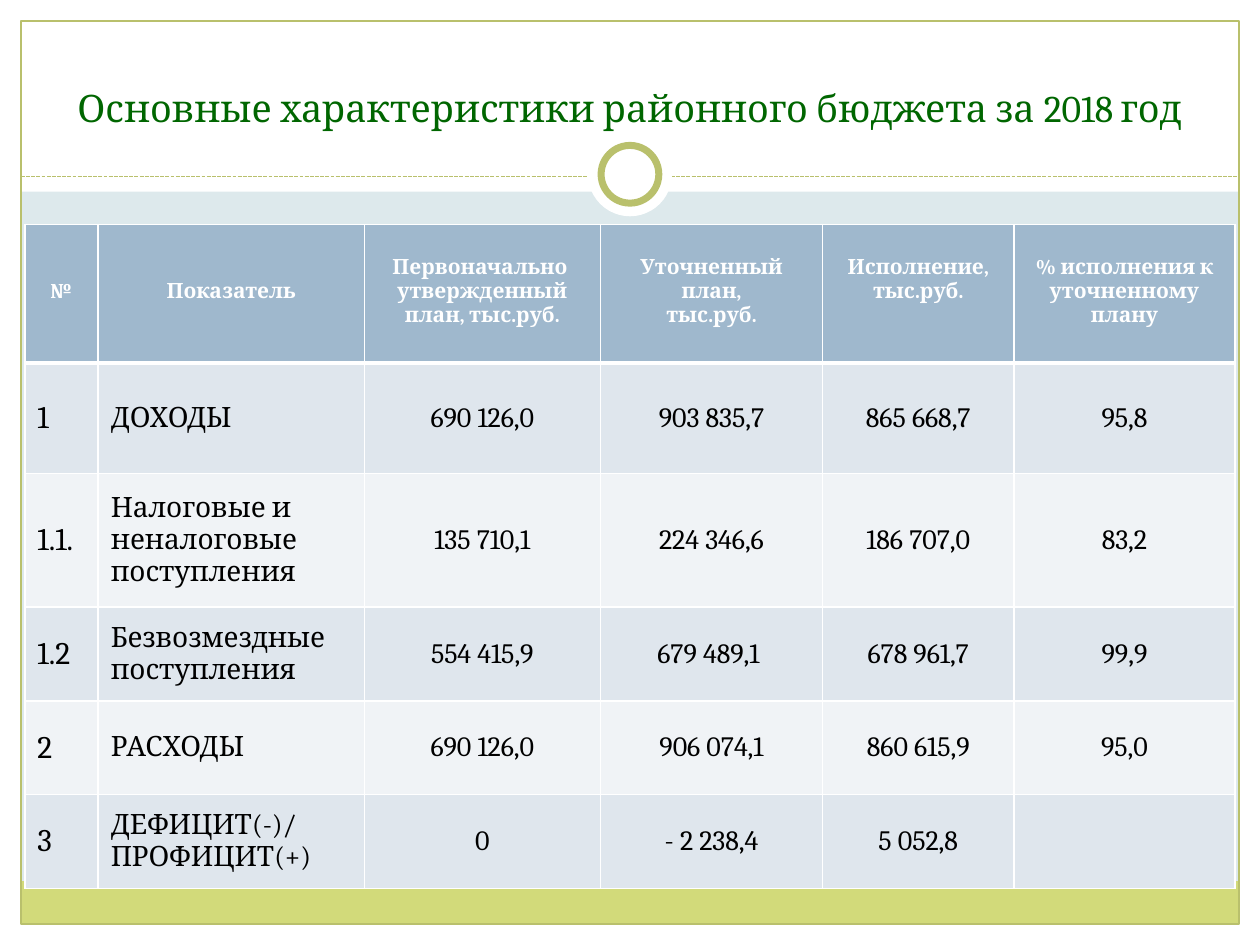
from dataclasses import dataclass

from lxml.etree import SubElement
from pptx import Presentation
from pptx.dml.color import RGBColor
from pptx.enum.dml import MSO_LINE
from pptx.enum.shapes import MSO_CONNECTOR, MSO_SHAPE
from pptx.enum.text import MSO_ANCHOR, MSO_AUTO_SIZE, PP_ALIGN
from pptx.oxml.ns import qn
from pptx.util import Pt


@dataclass(frozen=True)
class Theme:
    """Colours, font and type sizes of the slide."""

    font: str = "Cambria"
    back: str = "DDE9EC"
    white: str = "FFFFFF"
    black: str = "000000"
    olive: str = "B9C06C"
    lime: str = "D2DA7A"
    green: str = "006600"
    header: str = "9FB8CD"
    bands: tuple = ("DFE6ED", "F0F3F6")
    title_size: float = 21.6
    header_size: float = 12
    body_size: float = 16
    number_size: float = 18


THEME = Theme()
WIDTH, HEIGHT, MARGIN = 720, 540, 12
HEADER_LINE = 14
COLUMNS = (41.9, 152.1, 134.9, 127.1, 109.2, 126.5)
ROWS = (79.2, 63.1, 76.5, 53.7, 53.3, 53.9)
HEADERS = (
    "№",
    "Показатель",
    "Первоначально \nутвержденный\nплан, тыс.руб.",
    "Уточненный\nплан,\nтыс.руб.",
    "Исполнение, тыс.руб.",
    "% исполнения к\nуточненному\nплану",
)
BUDGET = (
    ("1", "ДОХОДЫ", "690 126,0", "903 835,7", "865 668,7", "95,8"),
    ("1.1.", "Налоговые и неналоговые\nпоступления",
     "135 710,1", "224 346,6", "186 707,0", "83,2"),
    ("1.2", "Безвозмездные поступления",
     "554 415,9", "679 489,1 ", "678 961,7", "99,9"),
    ("2", "РАСХОДЫ", "690 126,0", "906 074,1", "860 615,9", "95,0"),
    ("3", "ДЕФИЦИТ(-)/\nПРОФИЦИТ(+)", "0", "- 2 238,4", "5 052,8", ""),
)


def set_attrs(obj, attrs):
    """Set every attribute in the dict on the object."""
    for name, value in attrs.items():
        setattr(obj, name, value)


def rgb(color):
    """Turn a hex string into a colour."""
    return RGBColor.from_string(color)


def write_text(tf, text, size, color, align, bold=False):
    """Write each line of the text as a formatted paragraph."""
    for i, line in enumerate(text.split("\n")):
        p = tf.paragraphs[0] if i == 0 else tf.add_paragraph()
        p.alignment = align
        r = p.add_run()
        r.text = line
        set_attrs(r.font, {"name": THEME.font, "size": Pt(size), "bold": bold})
        r.font.color.rgb = rgb(color)


def add_block(s, kind, box, fill=None, line=None, weight=0.75):
    """Add a preset shape with an optional fill and outline."""
    sp = s.shapes.add_shape(kind, *map(Pt, box))
    sp.shadow.inherit = False
    if fill:
        sp.fill.solid()
        sp.fill.fore_color.rgb = rgb(fill)
    else:
        sp.fill.background()
    if line:
        sp.line.color.rgb = rgb(line)
        sp.line.width = Pt(weight)
    else:
        sp.line.fill.background()


def add_circle(s, diameter, **style):
    """Add a circle centred on the divider."""
    left, top = (WIDTH - diameter) / 2, 99.6 - diameter / 2
    add_block(s, MSO_SHAPE.OVAL, (left, top, diameter, diameter), **style)


def add_divider(s, y):
    """Add the dashed line below the title."""
    ln = s.shapes.add_connector(
        MSO_CONNECTOR.STRAIGHT, Pt(MARGIN), Pt(y), Pt(WIDTH - MARGIN), Pt(y))
    ln.line.color.rgb = rgb(THEME.olive)
    set_attrs(ln.line, {"width": Pt(0.75), "dash_style": MSO_LINE.SQUARE_DOT})
    SubElement(ln.element.spPr, qn("a:effectLst"))


def add_frame(s):
    """Add the white margins, the lower band, the border and the ring."""
    inner = WIDTH - 2 * MARGIN
    rect = MSO_SHAPE.RECTANGLE
    margins = (
        (0, HEIGHT - MARGIN, WIDTH, MARGIN),
        (0, 0, WIDTH, 109.5),
        (0, 0, MARGIN, HEIGHT),
        (WIDTH - MARGIN, 0, MARGIN, HEIGHT),
    )
    for box in margins:
        add_block(s, rect, box, fill=THEME.white)
    add_block(s, rect, (MARGIN, 503.5, inner, 24.5), fill=THEME.lime)
    add_block(s, rect, (MARGIN, MARGIN, inner, HEIGHT - 2 * MARGIN), line=THEME.olive)
    add_divider(s, 100.8)
    add_circle(s, 48, fill=THEME.white)
    add_circle(s, 33, fill=THEME.white, line=THEME.olive, weight=4)


def add_title(s, text):
    """Place and format the title above the frame."""
    sp = s.shapes.title
    s.shapes.element.append(sp.element)
    set_attrs(sp, {"left": Pt(24), "top": Pt(18), "width": Pt(672), "height": Pt(60)})
    set_attrs(sp.text_frame, {
        "word_wrap": True,
        "auto_size": MSO_AUTO_SIZE.NONE,
        "vertical_anchor": MSO_ANCHOR.BOTTOM,
    })
    write_text(sp.text_frame, text, THEME.title_size, THEME.green, PP_ALIGN.CENTER)


def style_cell(cell, fill, **weights):
    """Give a cell white borders and a solid fill."""
    tc_pr = cell._tc.get_or_add_tcPr()
    for side in "LRTB":
        ln = SubElement(tc_pr, qn(f"a:ln{side}"), w=str(Pt(weights.get(side, 1))))
        solid = SubElement(ln, qn("a:solidFill"))
        SubElement(solid, qn("a:srgbClr"), val=THEME.white)
    cell.fill.solid()
    cell.fill.fore_color.rgb = rgb(fill)


def fill_header(cell, text, lead):
    """Fill a header cell, starting the given number of lines down."""
    cell.margin_top = Pt(3.6 + lead * HEADER_LINE)
    style_cell(cell, THEME.header, B=3)
    write_text(cell.text_frame, text, THEME.header_size, THEME.white,
               PP_ALIGN.CENTER, bold=True)


def fill_body(cell, text, row, col):
    """Fill a body cell according to its row and column."""
    cell.vertical_anchor = MSO_ANCHOR.MIDDLE
    style_cell(cell, THEME.bands[(row - 1) % 2], **({"T": 3} if row == 1 else {}))
    size = THEME.number_size if col == 0 else THEME.body_size
    align = PP_ALIGN.LEFT if col < 2 else PP_ALIGN.CENTER
    write_text(cell.text_frame, text, size, THEME.black, align)


def add_budget_table(s):
    """Add the table of budget figures."""
    table = s.shapes.add_table(
        len(ROWS), len(COLUMNS), Pt(14.2), Pt(128.2),
        Pt(sum(COLUMNS)), Pt(sum(ROWS))).table
    for column, width in zip(table.columns, COLUMNS):
        column.width = Pt(width)
    for row, height in zip(table.rows, ROWS):
        row.height = Pt(height)
    for col, text in enumerate(HEADERS):
        fill_header(table.cell(0, col), text, 2 if col < 2 else 1)
    for row, values in enumerate(BUDGET, 1):
        for col, text in enumerate(values):
            fill_body(table.cell(row, col), text, row, col)


def main():
    """Build and save the slide."""
    prs = Presentation()
    set_attrs(prs, {"slide_width": Pt(WIDTH), "slide_height": Pt(HEIGHT)})
    s = prs.slides.add_slide(prs.slide_layouts[5])
    s.background.fill.solid()
    s.background.fill.fore_color.rgb = rgb(THEME.back)
    add_frame(s)
    add_title(s, "Основные характеристики районного бюджета за 2018 год")
    add_budget_table(s)
    prs.save("out.pptx")


if __name__ == "__main__":
    main()
